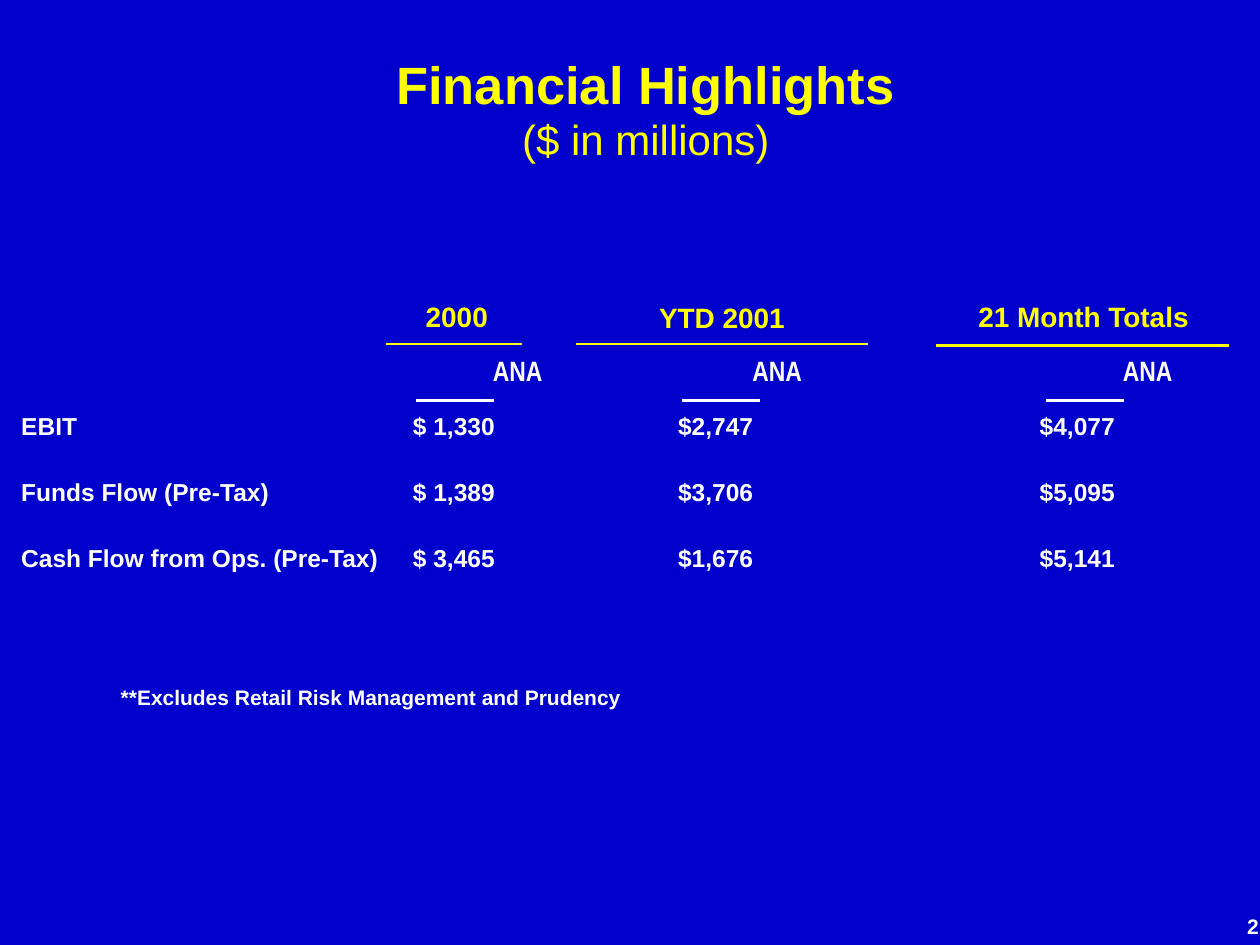
from lxml import etree
from pptx import Presentation
from pptx.dml.color import RGBColor
from pptx.enum.shapes import MSO_CONNECTOR
from pptx.enum.text import MSO_ANCHOR, PP_ALIGN
from pptx.oxml.ns import qn
from pptx.util import Inches, Pt

COLORS = {"background": "0000CC", "heading": "FFFF00", "body": "FFFFFF"}

# heading, text box (left, top, width), rule (left, right, y), company rule left
PERIODS = [
    ("2000", (2.8, 2.33, 1.65), (3.06, 4.14, 2.73), 3.3),
    ("YTD 2001", (4.66, 2.34, 2.14), (4.57, 6.89, 2.73), 5.41),
    ("21 Month Totals", (7.53, 2.33, 2.14), (7.43, 9.75, 2.74), 8.3),
]
COMPANY = "ANA"
COMPANY_TABS = [3.88, 5.94, 8.88]
COMPANY_RULE_Y = 3.18
COMPANY_RULE_WIDTH = 0.62
FIGURES = [
    ("EBIT", "$ 1,330", "$2,747", "$4,077"),
    ("Funds Flow (Pre-Tax)", "$ 1,389", "$3,706", "$5,095"),
    ("Cash Flow from Ops. (Pre-Tax)", "$ 3,465", "$1,676", "$5,141"),
]
FIGURE_TABS = [3.76, 5.81, 8.68]


def set_font(font, size, color="body", name="Arial", bold=True):
    font.name = name
    font.size = Pt(size)
    font.bold = bold
    font.color.rgb = RGBColor.from_string(COLORS[color])


def add_text(slide, box, lines, size, color="body", name="Arial",
             align=PP_ALIGN.LEFT, wrap=True):
    """Add a text box with one paragraph per line and return its frame."""
    frame = slide.shapes.add_textbox(*map(Inches, box)).text_frame
    frame.word_wrap = wrap
    frame.text = "\n".join(lines)
    for paragraph in frame.paragraphs:
        paragraph.alignment = align
        set_font(paragraph.font, size, color, name)
    return frame


def set_tabs(paragraph, positions, kind):
    """Put tab stops before the default run properties, as the schema asks."""
    properties = paragraph._p.get_or_add_pPr()
    tabs = etree.Element(qn("a:tabLst"))
    for position in positions:
        etree.SubElement(tabs, qn("a:tab"), pos=str(Inches(position)), algn=kind)
    properties.find(qn("a:defRPr")).addprevious(tabs)


def add_rule(slide, left, right, y, color):
    rule = slide.shapes.add_connector(
        MSO_CONNECTOR.STRAIGHT, Inches(left), Inches(y), Inches(right), Inches(y))
    rule.line.color.rgb = RGBColor.from_string(COLORS[color])
    rule.line.width = Pt(1.5)
    etree.SubElement(rule._element.spPr, qn("a:effectLst"))


def add_title(slide):
    frame = add_text(slide, (0.25, 0.42, 9.75, 0.92), [""], 30, "heading",
                     align=PP_ALIGN.CENTER)
    frame.vertical_anchor = MSO_ANCHOR.MIDDLE
    paragraph = frame.paragraphs[0]
    paragraph.line_spacing = 0.95
    title = paragraph.add_run()
    title.text = "Financial Highlights"
    set_font(title.font, 30, "heading")
    paragraph.add_line_break()
    unit = paragraph.add_run()
    unit.text = "($ in millions)"
    set_font(unit.font, 24, "heading", bold=False)


def add_period_headings(slide):
    for heading, box, rule, company_left in PERIODS:
        add_text(slide, (*box, 0.37), [heading], 16, "heading",
                 align=PP_ALIGN.CENTER)
        add_rule(slide, *rule, "heading")
        add_rule(slide, company_left, company_left + COMPANY_RULE_WIDTH,
                 COMPANY_RULE_Y, "body")
    companies = "".join("\t" + COMPANY for _ in PERIODS)
    frame = add_text(slide, (0.13, 2.76, 9.87, 0.37), [companies], 16,
                     name="Arial Narrow")
    set_tabs(frame.paragraphs[0], COMPANY_TABS, "ctr")


def add_figures(slide):
    frame = add_text(slide, (0.07, 3.21, 9.93, 1.39),
                     ["\t".join(row) for row in FIGURES], 14)
    for paragraph in frame.paragraphs:
        paragraph.space_before = Pt(20.1)
        paragraph.space_after = Pt(0.9)
        set_tabs(paragraph, FIGURE_TABS, "r")


def main():
    presentation = Presentation()
    presentation.slide_width = Inches(10)
    presentation.slide_height = Inches(7.5)
    slide = presentation.slides.add_slide(presentation.slide_layouts[6])
    fill = slide.background.fill
    fill.solid()
    fill.fore_color.rgb = RGBColor.from_string(COLORS["background"])

    add_title(slide)
    add_period_headings(slide)
    add_figures(slide)
    add_text(slide, (0.86, 5.38, 4.22, 0.3),
             ["**Excludes Retail Risk Management and Prudency"], 12, wrap=False)
    add_text(slide, (9.8, 7.2, 0.29, 0.3), ["2"], 12, wrap=False)
    presentation.save("out.pptx")


if __name__ == "__main__":
    main()
